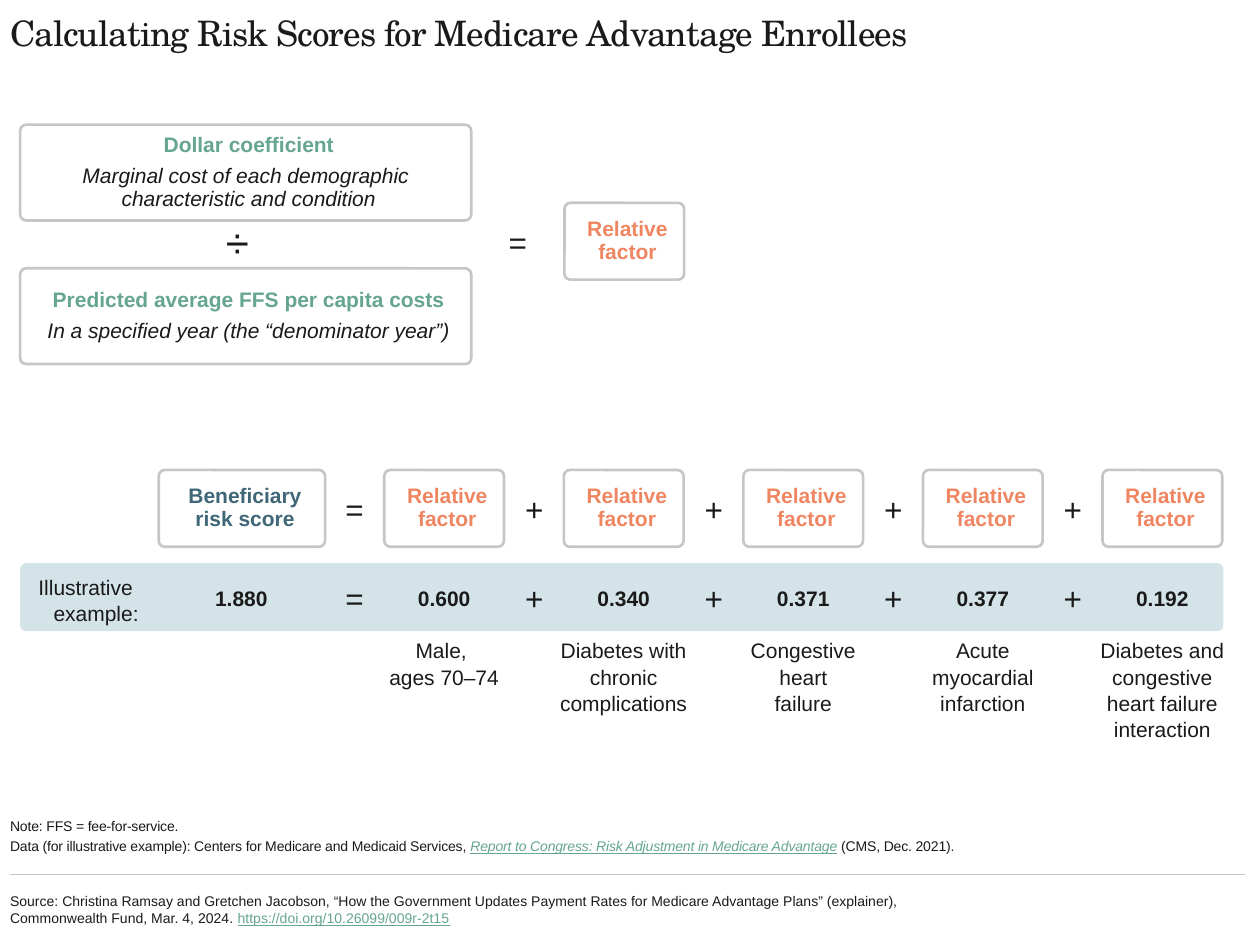
from dataclasses import dataclass

from lxml import etree
from pptx import Presentation
from pptx.dml.color import RGBColor
from pptx.enum.shapes import MSO_CONNECTOR, MSO_SHAPE
from pptx.enum.text import MSO_ANCHOR, MSO_AUTO_SIZE, PP_ALIGN
from pptx.oxml.ns import qn
from pptx.util import Inches, Pt

ROUNDED = MSO_SHAPE.ROUNDED_RECTANGLE
STRAIGHT = MSO_CONNECTOR.STRAIGHT
TOP, MIDDLE, BOTTOM = MSO_ANCHOR.TOP, MSO_ANCHOR.MIDDLE, MSO_ANCHOR.BOTTOM
LEFT, CENTER, RIGHT = PP_ALIGN.LEFT, PP_ALIGN.CENTER, PP_ALIGN.RIGHT
NO_AUTOFIT = MSO_AUTO_SIZE.NONE

INK, GREEN, ORANGE, BLUE = "1A1A1A", "65A591", "F08661", "3F6777"
GREY, PALE, WHITE = "C6C6C6", "D4E3E8", "FFFFFF"
SANS, SERIF = "Arial", "TeX Gyre Schola"

CELL = 0.1
COLUMNS, ROWS = 100, 75
PITCH = 14.25
FACTOR_WIDTH, CARD_HEIGHT = 9.5, 6.1
FACTOR_LEFT = 30.5
EQUALS_LEFT, PLUS_LEFT = 25.5, 39.75
SYMBOL_WIDTH, SYMBOL_HEIGHT = 5.3, 4
NO_INSETS = (0, 0, 0, 0)
CARD_INSETS = (0.12, 0.07, 0.07, 0.07)
TEXT_INSETS = (0.1, 0.05, 0.1, 0.05)

EXAMPLE_FACTORS = [
    ("0.600", ["Male, ", "ages 70–74"], 11.4, 9.1),
    ("0.340", ["Diabetes with chronic complications"], 12.6, 11.1),
    ("0.371", ["Congestive heart failure"], 10.5, 11.1),
    ("0.377", ["Acute myocardial infarction"], 10.5, 11.1),
    ("0.192", ["Diabetes and congestive heart failure interaction"], 12.7, 13.1),
]


@dataclass
class Box:
    left: float
    top: float
    width: float
    height: float

    def inner(self, left, top, width, height):
        return Box(self.left + left, self.top + top, width, height)

    def lengths(self):
        cells = (self.left, self.top, self.width, self.height)
        return [Inches(cell * CELL) for cell in cells]


def colour(value):
    return RGBColor.from_string(value)


def add_run(paragraph, text, size=12, ink=INK, font=SANS, spacing=0, **style):
    run = paragraph.add_run()
    run.text = text
    run.font.name = font
    run.font.size = Pt(size)
    run.font.color.rgb = colour(ink)
    for name, value in style.items():
        setattr(run.font, name, value)
    if spacing:
        run._r.get_or_add_rPr().set("spc", str(spacing))


def prepare_frame(shape, anchor=TOP, insets=TEXT_INSETS):
    frame = shape.text_frame
    frame.word_wrap = True
    frame.auto_size = NO_AUTOFIT
    frame.vertical_anchor = anchor
    (frame.margin_left, frame.margin_top,
     frame.margin_right, frame.margin_bottom) = map(Inches, insets)
    return frame


def add_paragraph(frame, first=False, align=CENTER, line=1.0, before=0, after=0):
    paragraph = frame.paragraphs[0] if first else frame.add_paragraph()
    paragraph.alignment = align
    paragraph.line_spacing = line
    paragraph.space_before = Pt(before)
    paragraph.space_after = Pt(after)
    return paragraph


def add_text_box(slide, box, **frame_style):
    return prepare_frame(slide.shapes.add_textbox(*box.lengths()), **frame_style)


def add_symbol(slide, box, symbol, size=18):
    frame = add_text_box(slide, box)
    add_run(add_paragraph(frame, first=True), symbol, size)


def add_panel(slide, box, fill, outline=None):
    shape = slide.shapes.add_shape(ROUNDED, *box.lengths())
    shape.shadow.inherit = False
    shape.adjustments[0] = 0.48 / box.height
    shape.fill.solid()
    shape.fill.fore_color.rgb = colour(fill)
    if outline:
        shape.line.color.rgb = colour(outline)
        shape.line.width = Pt(1.5)
    else:
        shape.line.fill.background()
    return shape


def add_card(slide, box, heading, ink, detail=()):
    panel = add_panel(slide, box, WHITE, GREY)
    frame = prepare_frame(panel, MIDDLE, CARD_INSETS)
    paragraph = add_paragraph(frame, True, line=0.9, after=4.6 if detail else 0)
    add_run(paragraph, heading, ink=ink, bold=True)
    if detail:
        paragraph = add_paragraph(frame, line=0.9)
        for index, text in enumerate(detail):
            if index:
                paragraph.add_line_break()
            add_run(paragraph, text, italic=True)


def add_factor(slide, box):
    add_card(slide, box, "Relative factor", ORANGE)


def add_ratio(slide, box):
    add_card(slide, box.inner(0, 0, 35.8, 7.6), "Dollar coefficient", GREEN,
             ["Marginal cost of each demographic ", "characteristic and condition"])
    add_card(slide, box.inner(0, 11.4, 35.8, 7.6),
             "Predicted average FFS per capita costs", GREEN,
             ["In a specified year (the “denominator year”)"])
    add_symbol(slide, box.inner(14.6, 6.8, SYMBOL_WIDTH, 5), "÷", 24)
    add_symbol(slide, box.inner(37.3, 7.3, 4.4, SYMBOL_HEIGHT), "=")
    add_factor(slide, box.inner(43.2, 6.2, FACTOR_WIDTH, CARD_HEIGHT))


def add_operators(slide, box):
    lefts = [EQUALS_LEFT] + [PLUS_LEFT + PITCH * index for index in range(4)]
    for left, symbol in zip(lefts, "=++++"):
        add_symbol(slide, box.inner(left, 0, SYMBOL_WIDTH, SYMBOL_HEIGHT), symbol)


def add_score_formula(slide, box):
    add_card(slide, box.inner(12.6, 0, 13.2, CARD_HEIGHT),
             "Beneficiary risk score", BLUE)
    for index in range(len(EXAMPLE_FACTORS)):
        left = FACTOR_LEFT + PITCH * index
        add_factor(slide, box.inner(left, 0, FACTOR_WIDTH, CARD_HEIGHT))
    add_operators(slide, box.inner(0, 1.1, box.width, SYMBOL_HEIGHT))


def add_example(slide, box):
    add_panel(slide, box.inner(1.6, 0, 95.5, 5.4), PALE)
    frame = add_text_box(slide, box.inner(1.7, 0.3, 10.3, 5))
    for index, text in enumerate(["Illustrative ", "example:"]):
        paragraph = add_paragraph(frame, index == 0, RIGHT, line=1.05)
        add_run(paragraph, text)
    frame = add_text_box(slide, box.inner(14.9, 1.3, 8.5, 3))
    add_run(add_paragraph(frame, True), "1.880", bold=True)
    for index, (value, captions, width, height) in enumerate(EXAMPLE_FACTORS):
        center = FACTOR_LEFT + FACTOR_WIDTH / 2 + PITCH * index
        frame = add_text_box(slide, box.inner(center - width / 2, 1.2, width, height))
        add_run(add_paragraph(frame, True, line=1.05), value, bold=True)
        for row, caption in enumerate(captions):
            paragraph = add_paragraph(frame, line=1.05, before=0 if row else 14.5)
            add_run(paragraph, caption)
    add_operators(slide, box.inner(0, 0.8, box.width, SYMBOL_HEIGHT))


def place(shape, box):
    shape.left, shape.top, shape.width, shape.height = box.lengths()


def fill_title(slide, box):
    title = slide.shapes.title
    place(title, box)
    frame = prepare_frame(title, TOP, NO_INSETS)
    add_run(add_paragraph(frame, True, LEFT),
            "Calculating Risk Scores for Medicare Advantage Enrollees",
            20, font=SERIF, spacing=-50)


def fill_notes(slide, box):
    body = slide.placeholders[1]
    place(body, box)
    frame = prepare_frame(body, BOTTOM, NO_INSETS)
    note = add_paragraph(frame, True, LEFT)
    data = add_paragraph(frame, align=LEFT, before=1.6)
    for paragraph in (note, data):
        properties = paragraph._p.get_or_add_pPr()
        properties.set("marL", "0")
        properties.set("indent", "0")
        etree.SubElement(properties, qn("a:buNone"))
    add_run(note, "Note: FFS = fee-for-service.", 8, spacing=-10)
    add_run(data, "Data (for illustrative example): Centers for Medicare and "
            "Medicaid Services, ", 8, spacing=-10)
    add_run(data, "Report to Congress: Risk Adjustment in Medicare Advantage",
            8, GREEN, spacing=-10, italic=True, underline=True)
    add_run(data, " (CMS, Dec. 2021).", 8, spacing=-10)


def add_source(slide, box):
    left, top, width, _ = box.lengths()
    rule = slide.shapes.add_connector(STRAIGHT, left + width, top, left, top)
    rule.line.color.rgb = colour(GREY)
    rule.line.width = Pt(0.75)
    etree.SubElement(rule._element.spPr, qn("a:effectLst"))
    frame = add_text_box(slide, box.inner(0, 0.5, 78, 4.6),
                         anchor=MIDDLE, insets=NO_INSETS)
    paragraph = add_paragraph(frame, True, LEFT)
    add_run(paragraph, "Source: Christina Ramsay and Gretchen Jacobson, “How the "
            "Government Updates Payment Rates for Medicare Advantage Plans” "
            "(explainer), Commonwealth Fund, Mar. 4, 2024. ", 8)
    add_run(paragraph, "https://doi.org/10.26099/009r-2t15", 8, GREEN, underline=True)


def main():
    presentation = Presentation()
    presentation.slide_width = Inches(COLUMNS * CELL)
    presentation.slide_height = Inches(ROWS * CELL)
    slide = presentation.slides.add_slide(presentation.slide_layouts[1])
    fill_title(slide, Box(0.8, 0.9, 98, 6.8))
    add_ratio(slide, Box(1.6, 9.9, 52.7, 19))
    add_score_formula(slide, Box(0, 37.3, COLUMNS, CARD_HEIGHT))
    add_example(slide, Box(0, 44.7, COLUMNS, 14.3))
    fill_notes(slide, Box(0.8, 62.8, 98, 5))
    add_source(slide, Box(0.8, 69.4, 98, 5.1))
    presentation.save("out.pptx")


if __name__ == "__main__":
    main()
